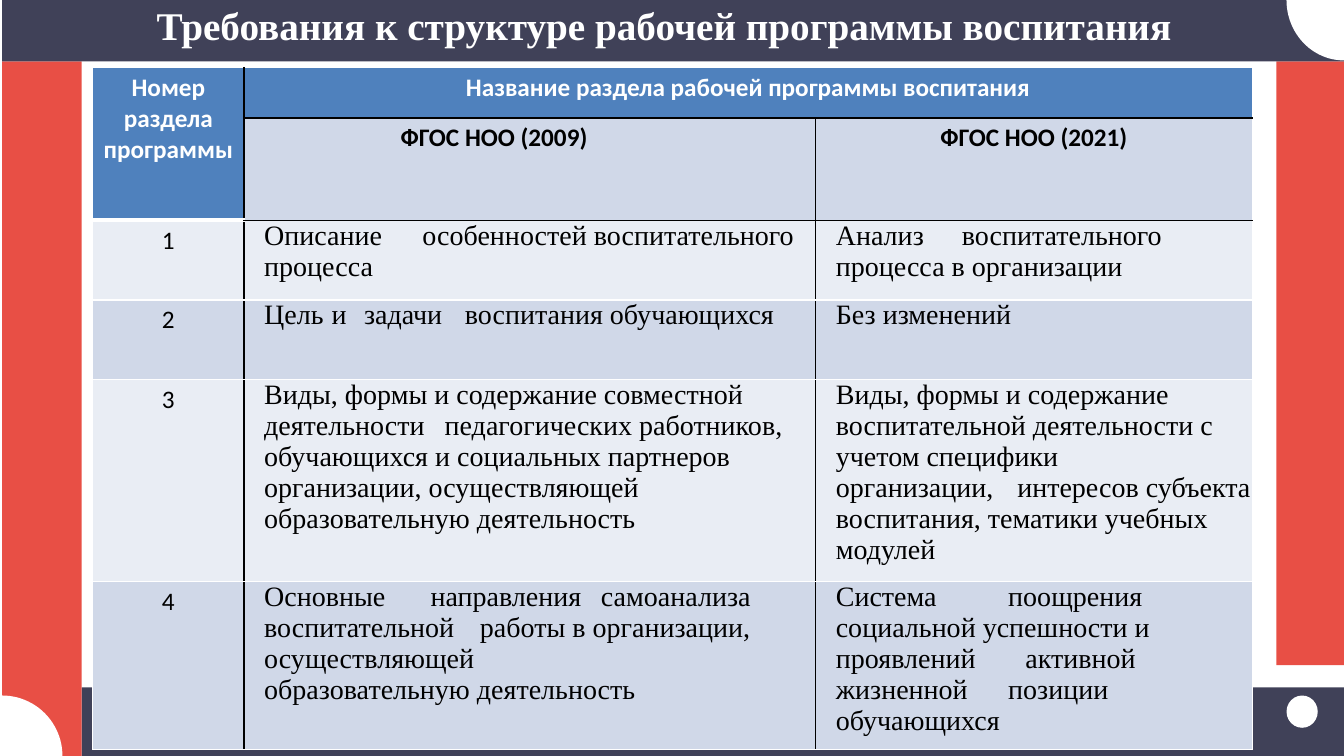
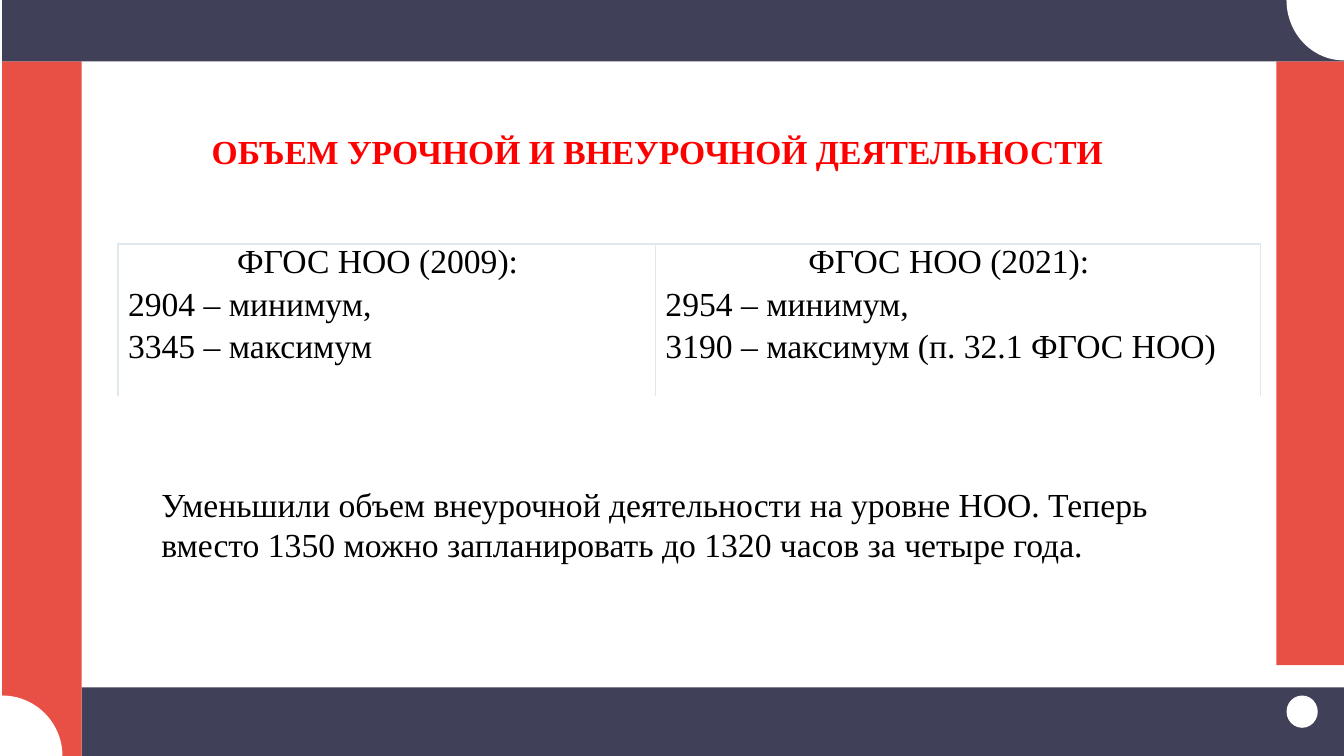
import math
from dataclasses import dataclass

from lxml import etree
from pptx import Presentation
from pptx.dml import color
from pptx.enum import shapes, text
from pptx.oxml import ns
from pptx.util import Inches, Pt

NAVY, RED, WHITE, BLACK = "404158", "E84F45", "FFFFFF", "000000"
BLUE, PALE, LIGHT, MIST = "4F81BD", "D0D8E8", "E9EDF4", "DFE8EC"
SERIF, SANS = "Times New Roman", "Calibri"
LEFT, MID = text.PP_ALIGN.LEFT, text.PP_ALIGN.CENTER


@dataclass(frozen=True)
class Box:
    left: float
    top: float
    width: float
    height: float

    def spot(self) -> tuple:
        return tuple(Inches(n) for n in (self.left, self.top, self.width, self.height))


@dataclass(frozen=True)
class Band:
    box: Box
    hue: str
    kind: int = shapes.MSO_SHAPE.RECTANGLE


@dataclass(frozen=True)
class Curve:
    left: float
    top: float
    wide: float
    high: float


@dataclass(frozen=True)
class Style:
    font: str
    size: float
    hue: str = BLACK
    bold: bool = False
    align: int = LEFT
    before: float = 0


@dataclass(frozen=True)
class Entry:
    words: str
    tabs: tuple = ()


@dataclass(frozen=True)
class Line:
    old: Entry
    new: Entry


BANDS = (
    Band(Box(12.66, 0.61, 0.68, 5.99), RED),
    Band(Box(0.81, 6.82, 12.52, 0.68), NAVY),
    Band(Box(0.02, 0.61, 0.79, 6.89), RED),
    Band(Box(0.02, 0, 13.31, 0.61), NAVY),
    Band(Box(12.76, 6.9, 0.31, 0.32), WHITE, shapes.MSO_SHAPE.OVAL),
)
CURVES = (Curve(0.02, 7.5, 0.6, -0.6), Curve(13.33, 0, -0.57, 0.6))

HEAD = Style(SANS, 18, WHITE, True, MID)
SUB = Style(SANS, 18, BLACK, True, MID)
COUNT = Style(SANS, 18, align=MID)
PROSE = Style(SERIF, 20)
LARGE = Style(SERIF, 24)
HOURS = Style(SERIF, 24, before=3.6)

LINES = (
    Line(
        Entry("Описание\tособенностей воспитательного процесса", (1.57,)),
        Entry("Анализ\tвоспитательного процесса в организации", (1.25,)),
    ),
    Line(
        Entry("Цель\tи\tзадачи\tвоспитания обучающихся", (0.67, 0.99, 1.99)),
        Entry("Без изменений"),
    ),
    Line(
        Entry(
            "Виды, формы и содержание совместной деятельности\tпедагогических "
            "работников, обучающихся и социальных партнеров организации, "
            "осуществляющей\nобразовательную деятельность",
            (1.79,),
        ),
        Entry(
            "Виды, формы и содержание воспитательной деятельности с учетом "
            "специфики\nорганизации,\tинтересов субъекта воспитания, "
            "тематики учебных модулей",
            (1.8,),
        ),
    ),
    Line(
        Entry(
            "Основные\tнаправления\tсамоанализа воспитательной\tработы в "
            "организации, осуществляющей\nобразовательную деятельность",
            (1.65, 2.14, 3.34),
        ),
        Entry(
            "Система\tпоощрения социальной успешности и проявлений\t\tактивной\n"
            "жизненной\tпозиции обучающихся",
            (1.71, 1.88, 1.95),
        ),
    ),
)
NORMS = (
    "ФГОС НОО (2009):\n2904 – минимум,\n3345 – максимум",
    "ФГОС НОО (2021):\n2954 – минимум,\n3190 – максимум (п. 32.1 ФГОС НОО)",
)


def tint(code: str) -> color.RGBColor:
    return color.RGBColor.from_string(code)


def paint(shape, hue: str) -> None:
    shape.shadow.inherit = False
    shape.fill.solid()
    shape.fill.fore_color.rgb = tint(hue)
    shape.line.fill.background()


def frame(slide) -> None:
    for band in BANDS:
        paint(slide.shapes.add_shape(band.kind, *band.box.spot()), band.hue)
    for arc in CURVES:
        turns = [math.pi / 2 * step / 24 for step in range(25)]
        dots = [
            (
                Inches(arc.left + arc.wide * math.cos(turn)),
                Inches(arc.top + arc.high * math.sin(turn)),
            )
            for turn in turns
        ]
        pen = slide.shapes.build_freeform(Inches(arc.left), Inches(arc.top))
        pen.add_line_segments(dots, close=True)
        paint(pen.convert_to_shape(), WHITE)


def write(body, words: str, style: Style, tabs: tuple = ()) -> None:
    body.text = words
    for para in body.paragraphs:
        para.alignment = style.align
        para.space_before = Pt(style.before)
        if tabs:
            stops = etree.SubElement(para._p.get_or_add_pPr(), ns.qn("a:tabLst"))
            for stop in tabs:
                place = str(Inches(stop))
                etree.SubElement(stops, ns.qn("a:tab"), pos=place, algn="l")
        for run in para.runs:
            font = run.font
            font.name, font.size, font.bold = style.font, Pt(style.size), style.bold
            font.color.rgb = tint(style.hue)


def pad(item, left: float, top: float, right: float, base: float) -> None:
    item.margin_left, item.margin_top = Inches(left), Inches(top)
    item.margin_right, item.margin_bottom = Inches(right), Inches(base)


def hold(slide, shape, box: Box, words: str, style: Style):
    shape.left, shape.top, shape.width, shape.height = box.spot()
    body = shape.text_frame
    body.word_wrap = True
    body.auto_size = text.MSO_AUTO_SIZE.NONE
    body.vertical_anchor = text.MSO_ANCHOR.TOP
    write(body, words, style)
    slide.shapes.element.append(shape.element)
    return body


def edge(cell, sides: dict) -> None:
    props = cell._tc.get_or_add_tcPr()
    order = [side for side in ("L", "R", "T", "B") if side in sides]
    for spot, side in enumerate(order):
        hue, size = sides[side]
        line = etree.Element(ns.qn("a:ln" + side), w=str(Pt(size)))
        fill = etree.SubElement(line, ns.qn("a:solidFill"))
        etree.SubElement(fill, ns.qn("a:srgbClr"), val=hue)
        props.insert(spot, line)


def grid(slide, left: float, top: float, cols: tuple, rows: tuple):
    box = Box(left, top, sum(cols), sum(rows))
    table = slide.shapes.add_table(len(rows), len(cols), *box.spot()).table
    table.first_row = table.horz_banding = False
    for col, width in zip(table.columns, cols):
        col.width = Inches(width)
    for row, height in zip(table.rows, rows):
        row.height = Inches(height)
    return table


def rule(row: int, col: int) -> dict:
    def ink(dark: bool) -> tuple:
        return (BLACK if dark else WHITE, 1)

    thick = (WHITE, 3) if col == 0 and row < 2 else ink(col > 0 and row < 2)
    return {
        "L": ink(col > 0 and (row, col) != (0, 2)),
        "R": ink(col == 0 or (col == 1 and row > 0)),
        "T": ink(col > 0 and row in (1, 2)),
        "B": thick,
    }


def parts(slide) -> None:
    frame(slide)
    body = hold(
        slide,
        slide.shapes.title,
        Box(1, 0, 11.17, 1.49),
        "Требования к структуре рабочей программы воспитания",
        Style(SERIF, 28, WHITE, True, MID),
    )
    pad(body, 0, 0.01, 0, 0)
    rows = (0.5, 1, 0.79, 0.79, 2, 1.67)
    table = grid(slide, 0.92, 0.67, (1.5, 5.67, 4.33), rows)
    for row in range(len(rows)):
        for col in range(3):
            cell = table.cell(row, col)
            cell.fill.solid()
            top = row == 0 or (row == 1 and col == 0)
            hue = BLUE if top else PALE if row % 2 else LIGHT
            cell.fill.fore_color.rgb = tint(hue)
            edge(cell, rule(row, col))
    table.cell(0, 0).merge(table.cell(1, 0))
    table.cell(0, 1).merge(table.cell(0, 2))
    write(table.cell(0, 0).text_frame, "Номер раздела программы", HEAD)
    title = "Название раздела рабочей программы воспитания"
    write(table.cell(0, 1).text_frame, title, HEAD)
    for col, year in enumerate((2009, 2021), 1):
        write(table.cell(1, col).text_frame, f"ФГОС НОО ({year})", SUB)
    table.cell(1, 1).margin_right = Inches(0.81)
    for count, line in enumerate(LINES, 1):
        row = count + 1
        write(table.cell(row, 0).text_frame, str(count), COUNT)
        for col, entry in enumerate((line.old, line.new), 1):
            cell = table.cell(row, col)
            pad(cell, 0.2, 0, 0, 0)
            write(cell.text_frame, entry.words, PROSE, entry.tabs)


def load(slide) -> None:
    frame(slide)
    body = hold(
        slide,
        slide.shapes.title,
        Box(1.5, 1.25, 10.62, 0.5),
        "ОБЪЕМ УРОЧНОЙ И ВНЕУРОЧНОЙ ДЕЯТЕЛЬНОСТИ",
        Style(SERIF, 24, "FF0000", True),
    )
    body.vertical_anchor = text.MSO_ANCHOR.MIDDLE
    body.margin_left = Inches(0.6)
    table = grid(slide, 1.17, 2.42, (5.33, 6), (1.5,))
    for col, words in enumerate(NORMS):
        cell = table.cell(0, col)
        cell.fill.background()
        edge(cell, {side: (MIST, 1) for side in "LRT"})
        pad(cell, 0.1, 0, 0.28, 0)
        write(cell.text_frame, words, HOURS)
        cell.text_frame.paragraphs[0].alignment = MID
    note = hold(
        slide,
        slide.placeholders[1],
        Box(1.5, 4.75, 10.42, 0.91),
        "Уменьшили объем внеурочной деятельности на уровне НОО. "
        "Теперь вместо 1350 можно запланировать до 1320 часов за четыре года.",
        LARGE,
    )
    props = note.paragraphs[0]._p.get_or_add_pPr()
    props.set("marL", "0")
    props.set("indent", "0")
    etree.SubElement(props, ns.qn("a:buNone"))


def main() -> None:
    deck = Presentation()
    deck.slide_width, deck.slide_height = Inches(13.33), Inches(7.5)
    for draw, form in ((parts, 5), (load, 1)):
        draw(deck.slides.add_slide(deck.slide_layouts[form]))
    deck.save("out.pptx")


if __name__ == "__main__":
    main()
